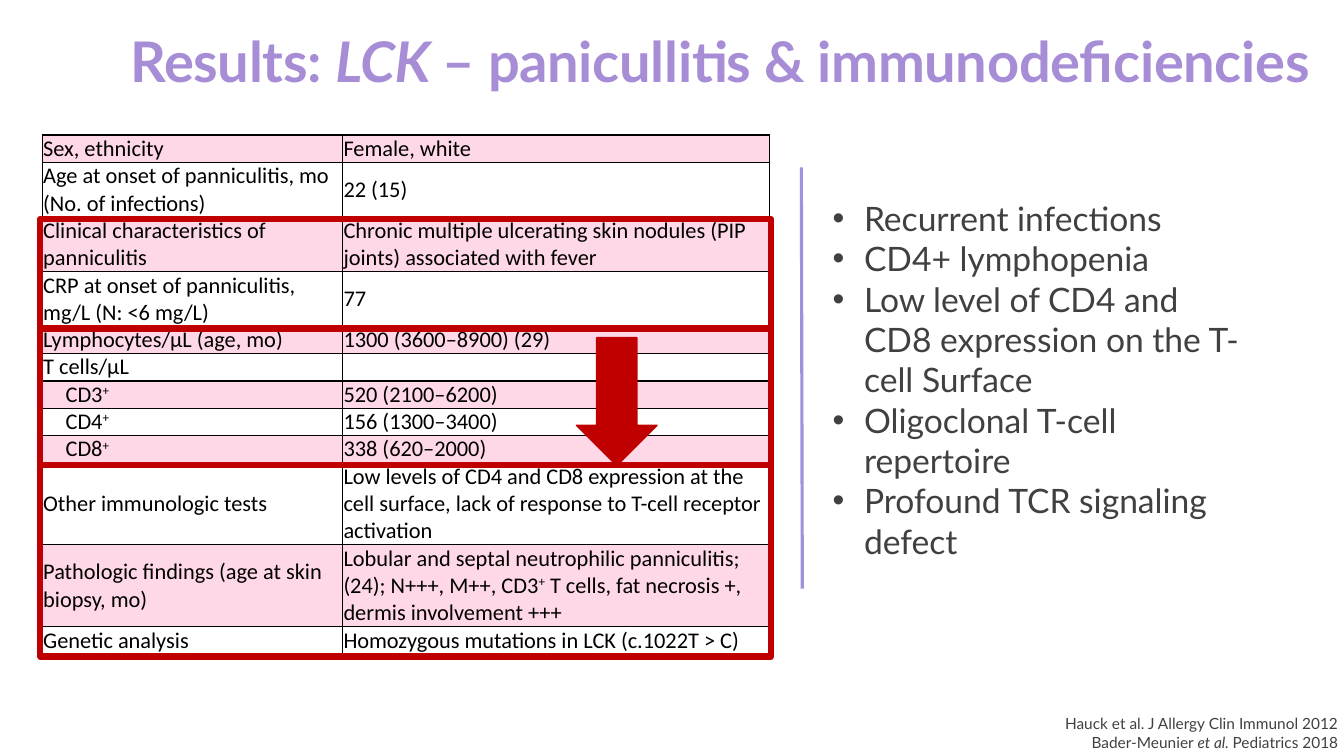
from lxml import etree
from pptx import Presentation
from pptx import util as u
from pptx.dml.color import RGBColor
from pptx.enum import shapes, text
from pptx.oxml.ns import qn

PURPLE, LAVENDER, RED = "A78DD5", "9B94DC", "C00000"
PINK, GREY, BLACK = "FFD8E8", "404040", "000000"
MIDDLE, BOTTOM = text.MSO_ANCHOR.MIDDLE, text.MSO_ANCHOR.BOTTOM
LEFT, RIGHT = text.PP_ALIGN.LEFT, text.PP_ALIGN.RIGHT
TABLE_TOP, LINE_HEIGHT = 96.5, 19.53

# Each row: label, value, number of text lines; "^" marks a superscript plus
TABLE_ROWS = [
    ("Sex, ethnicity", "Female, white", 1),
    ("Age at onset of panniculitis, mo (No. of infections)", "22 (15)", 2),
    ("Clinical characteristics of panniculitis",
     "Chronic multiple ulcerating skin nodules (PIP joints) associated with fever", 2),
    ("CRP at onset of panniculitis, mg/L (N: <6 mg/L)", "77", 2),
    ("Lymphocytes/μL (age, mo)", "1300 (3600–8900) (29)", 1),
    ("T cells/μL", "", 1),
    ("CD3^", "520 (2100–6200)", 1),
    ("CD4^", "156 (1300–3400)", 1),
    ("CD8^", "338 (620–2000)", 1),
    ("Other immunologic tests",
     "Low levels of CD4 and CD8 expression at the cell surface, "
     "lack of response to T-cell receptor activation", 3),
    ("Pathologic findings (age at skin biopsy, mo)",
     "Lobular and septal neutrophilic panniculitis; (24); N+++, M++, CD3^ T cells, "
     "fat necrosis +, dermis involvement +++", 3),
    ("Genetic analysis", "Homozygous mutations in LCK (c.1022T > C)", 1),
]
FINDINGS = [
    "Recurrent infections",
    "CD4+ lymphopenia",
    "Low level of CD4 and CD8 expression on the T-cell Surface",
    "Oligoclonal T-cell repertoire",
    "Profound TCR signaling defect",
]


def color(value):
    return RGBColor.from_string(value)


def points(*values):
    return [u.Pt(value) for value in values]


def row_top(index):
    return TABLE_TOP + LINE_HEIGHT * sum(lines for *_, lines in TABLE_ROWS[:index])


class SlideBuilder:
    """Holds the slide and its text styles."""

    styles = {
        "title": {"name": "Lato", "size": u.Pt(40), "bold": True, "color": PURPLE},
        "list": {"name": "Lato", "size": u.Pt(24), "color": GREY},
        "source": {"name": "Lato", "size": u.Pt(11), "color": GREY},
        "cell": {"name": "Calibri", "size": u.Pt(16), "color": BLACK},
    }

    def __init__(self, slide):
        self.slide = slide

    def run(self, paragraph, words, style, **changes):
        run = paragraph.add_run()
        run.text = words
        for key, value in {**self.styles[style], **changes}.items():
            if key == "color":
                run.font.color.rgb = color(value)
            else:
                setattr(run.font, key, value)
        return run

    def text_box(self, box, paragraphs, style, anchor, align=LEFT, wrap=True,
                 bullet_indent=0, spacing=0):
        """Each paragraph is a list of strings; every second one is italic."""
        frame = self.slide.shapes.add_textbox(*points(*box)).text_frame
        settings = {"word_wrap": wrap, "vertical_anchor": anchor, "margin_left": 0,
                    "margin_right": 0, "margin_top": 0, "margin_bottom": 0}
        for key, value in settings.items():
            setattr(frame, key, value)
        for index, parts in enumerate(paragraphs):
            paragraph = frame.add_paragraph() if index else frame.paragraphs[0]
            paragraph.alignment = align
            if bullet_indent:
                properties = paragraph._p.get_or_add_pPr()
                properties.set("marL", str(u.Pt(bullet_indent)))
                properties.set("indent", str(-u.Pt(bullet_indent)))
                etree.SubElement(properties, qn("a:buFont"), typeface="Arial")
                etree.SubElement(properties, qn("a:buChar"), char="•")
            for number, words in enumerate(parts):
                run = self.run(paragraph, words, style, italic=number % 2 == 1)
                if spacing:
                    run._r.get_or_add_rPr().set("spc", str(spacing))

    def cell(self, cell, words, fill):
        indent = 16.7 if words.startswith("CD") else 0.7
        settings = {"vertical_anchor": MIDDLE, "margin_left": u.Pt(indent),
                    "margin_right": u.Pt(0.7), "margin_top": 0, "margin_bottom": 0}
        for key, value in settings.items():
            setattr(cell, key, value)
        # Borders come before the fill in the cell properties
        for side in ("a:lnL", "a:lnR", "a:lnT", "a:lnB"):
            border = etree.SubElement(cell._tc.get_or_add_tcPr(), qn(side), w=str(u.Pt(1)))
            solid = etree.SubElement(border, qn("a:solidFill"))
            etree.SubElement(solid, qn("a:srgbClr"), val=BLACK)
        if fill:
            cell.fill.solid()
            cell.fill.fore_color.rgb = color(fill)
        else:
            cell.fill.background()
        paragraph = cell.text_frame.paragraphs[0]
        if not words:
            etree.SubElement(paragraph._p, qn("a:endParaRPr"), sz="1600")
            return
        for index, part in enumerate(words.split("^")):
            if index:
                plus = self.run(paragraph, "+", "cell")
                plus._r.get_or_add_rPr().set("baseline", "30000")
            if part:
                self.run(paragraph, part, "cell")

    def table(self, left, widths, rows):
        height = row_top(len(rows)) - TABLE_TOP
        frame = self.slide.shapes.add_table(
            len(rows), len(widths), *points(left, TABLE_TOP, sum(widths), height))
        table = frame.table
        table.first_row = table.horz_banding = False
        for column, width in zip(table.columns, widths):
            column.width = u.Pt(width)
        for index, (label, value, lines) in enumerate(rows):
            table.rows[index].height = u.Pt(LINE_HEIGHT * lines)
            fill = PINK if index % 2 == 0 else None
            for column, words in enumerate((label, value)):
                self.cell(table.cell(index, column), words, fill)

    def shape(self, kind, box, line_width, fill=None):
        shape = self.slide.shapes.add_shape(kind, *points(*box))
        shape.shadow.inherit = False
        shape.line.color.rgb = color(RED)
        shape.line.width = u.Pt(line_width)
        if fill:
            shape.fill.solid()
            shape.fill.fore_color.rgb = color(fill)
        else:
            shape.fill.background()

    def row_frame(self, first, end):
        """Frames the rows from first up to end, just below the row borders."""
        top, bottom = row_top(first) + 1.5, row_top(end) + 1.5
        self.shape(shapes.MSO_SHAPE.RECTANGLE, (28.8, top, 522, bottom - top), 4.5)

    def line(self, start, end, line_color, width):
        line = self.slide.shapes.add_connector(
            shapes.MSO_CONNECTOR.STRAIGHT, *points(*start, *end))
        line.line.color.rgb = color(line_color)
        line.line.width = u.Pt(width)
        etree.SubElement(line._element.spPr, qn("a:effectLst"))


def main():
    presentation = Presentation()
    presentation.slide_width, presentation.slide_height = points(960, 540)
    slide = presentation.slides.add_slide(presentation.slide_layouts[6])
    builder = SlideBuilder(slide)

    # Title
    builder.text_box((93, 18.7, 860, 48),
                     [["Results: ", "LCK ", "– panicullitis & immunodeficiencies"]],
                     "title", BOTTOM, wrap=False, spacing=-20)

    # Patient table
    builder.table(30.2, (214.5, 305), TABLE_ROWS)

    # Sources
    builder.text_box((759, 510, 197, 27),
                     [["Hauck et al. J Allergy Clin Immunol 2012"],
                      ["Bader-Meunier ", "et al. ", "Pediatrics 2018"]],
                     "source", MIDDLE, RIGHT)

    # Highlight frames and the arrow for low counts
    builder.row_frame(2, len(TABLE_ROWS))
    builder.shape(shapes.MSO_SHAPE.DOWN_ARROW, (411.8, 241.2, 57.6, 91.4), 1, RED)
    builder.row_frame(4, 9)

    # Key findings and divider
    builder.text_box((594.7, 139, 297.4, 261.5), [[finding] for finding in FINDINGS],
                     "list", BOTTOM, bullet_indent=22.5)
    builder.line((572.4, 119.5), (573.1, 420.5), LAVENDER, 2.25)

    presentation.save("out.pptx")


if __name__ == "__main__":
    main()
